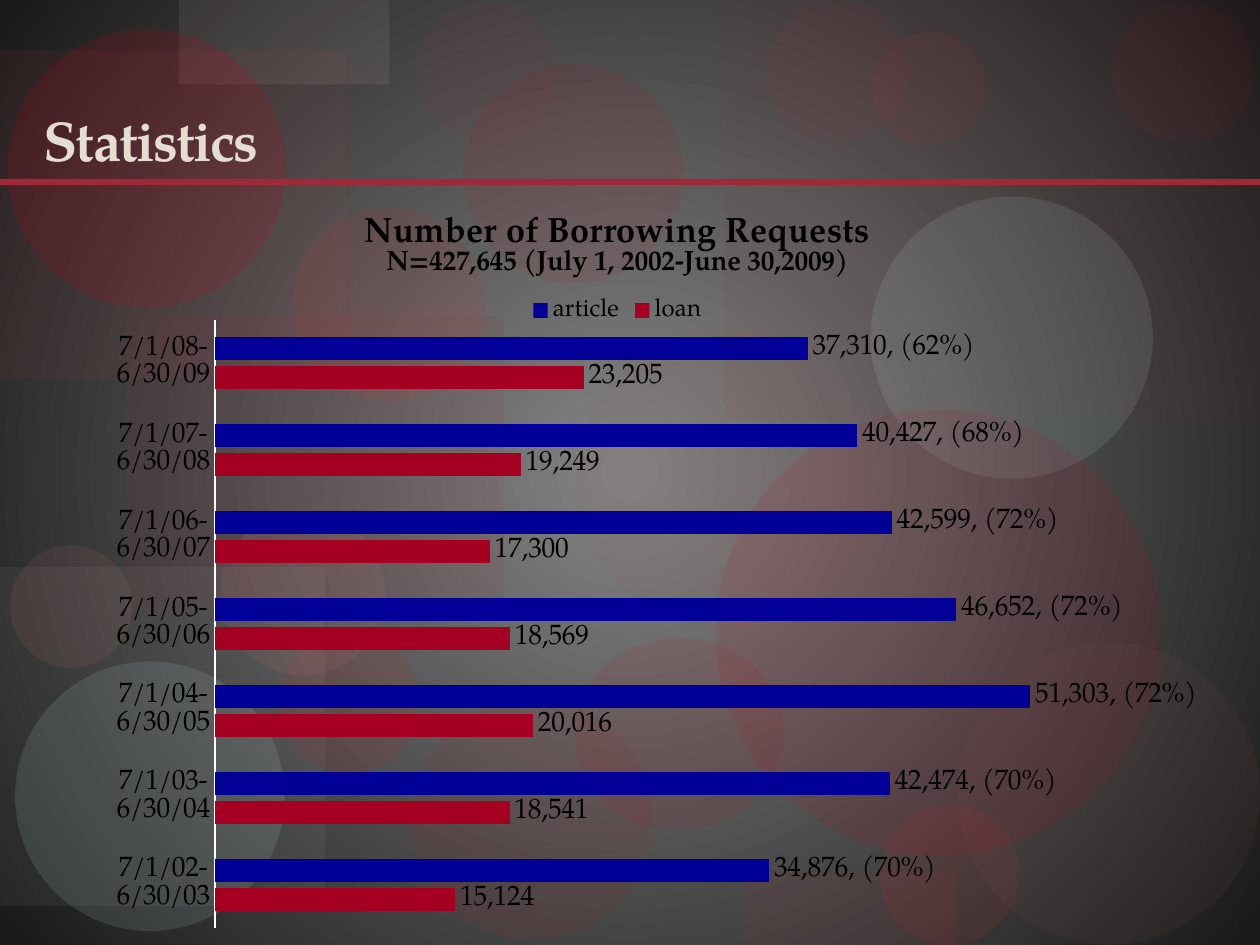
from dataclasses import dataclass

from lxml.etree import SubElement
from pptx import Presentation
from pptx.chart.data import CategoryChartData
from pptx.dml.color import RGBColor
from pptx.enum.chart import XL_CHART_TYPE, XL_LABEL_POSITION, XL_LEGEND_POSITION, XL_TICK_MARK
from pptx.enum.shapes import MSO_SHAPE
from pptx.enum.text import MSO_ANCHOR
from pptx.oxml import parse_xml
from pptx.oxml.ns import nsdecls, qn
from pptx.util import Pt

EMU_PER_PX = 9144  # 100 px to the inch
RECT, OVAL = MSO_SHAPE.RECTANGLE, MSO_SHAPE.OVAL


@dataclass(frozen=True)
class Theme:
    font: str = "TeX Gyre Pagella"
    glow: str = "848484"
    edge: str = "191919"
    rule: str = "9F2936"
    heading: str = "E3DED1"
    ink: str = "000000"
    axis: str = "FFFFFF"
    loan: str = "A50021"
    article: str = "000099"
    heading_size: int = 32
    chart_title_size: int = 20
    subtitle_size: int = 16
    label_size: int = 16
    legend_size: int = 14


# kind, left, top, width, height, colour, opacity in percent
BACKDROP = [
    (RECT, 100, 251, 300, 233, "9F2936", 9),
    (OVAL, 326, 555, 192, 190, "932C32", 13),
    (RECT, 575, 0, 425, 333, "9F2936", 6),
    (RECT, 0, 450, 258, 269, "AEAEAE", 8),
    (OVAL, 457, 261, 238, 238, "9D585B", 8),
    (OVAL, 698, 639, 111, 111, "EC232F", 9),
    (OVAL, 691, 156, 224, 224, "C1E8E4", 11),
    (OVAL, 12, 525, 214, 214, "C1E8E4", 12),
    (OVAL, 221, 501, 112, 112, "EC232F", 9),
    (OVAL, 456, 506, 166, 153, "C80016", 8),
    (RECT, 0, 40, 275, 261, "D03F47", 7),
    (RECT, 142, 0, 167, 67, "CDADAE", 10),
    (OVAL, 6, 23, 221, 221, "C80016", 15),
    (OVAL, 8, 433, 97, 97, "D5777B", 10),
    (OVAL, 232, 165, 153, 153, "EC232F", 9),
    (OVAL, 368, 51, 174, 174, "C80016", 8),
    (OVAL, 568, 325, 354, 354, "C80016", 10),
    (OVAL, 608, 1, 112, 112, "EC232F", 4),
    (OVAL, 760, 510, 240, 240, "9D585B", 8),
    (OVAL, 175, 405, 131, 131, "D5777B", 10),
    (OVAL, 692, 25, 90, 90, "EC232F", 6),
    (OVAL, 883, 1, 112, 112, "EC232F", 4),
    (RECT, 592, 692, 167, 58, "9F2936", 10),
    (OVAL, 329, 1, 112, 112, "EC232F", 4),
]

YEARS = [f"7/1/{y:02}-6/30/{y + 1:02}" for y in range(2, 9)]
LOANS = [15124, 18541, 20016, 18569, 17300, 19249, 23205]
ARTICLES = [34876, 42474, 51303, 46652, 42599, 40427, 37310]
ARTICLE_SHARES = [70, 70, 72, 72, 72, 68, 62]


def apply(target, values):
    for name, value in values.items():
        setattr(target, name, value)


class Deck:
    def __init__(self, theme, width, height):
        self.theme = theme
        self.presentation = Presentation()
        apply(self.presentation, {"slide_width": width * EMU_PER_PX,
                                  "slide_height": height * EMU_PER_PX})
        self.slide = self.presentation.slides.add_slide(self.presentation.slide_layouts[6])

    def box(self, *lengths):
        return [length * EMU_PER_PX for length in lengths]

    def style(self, font, size, color, bold=False):
        apply(font, {"name": self.theme.font, "size": Pt(size), "bold": bold})
        font.color.rgb = RGBColor.from_string(color)

    def radial_background(self, inner, outer):
        fill = self.slide.background.fill
        fill.gradient()
        for stop, position, color in zip(fill.gradient_stops, (0, 1), (inner, outer)):
            stop.position = position
            stop.color.rgb = RGBColor.from_string(color)
        linear = next(self.slide.element.iter(qn("a:lin")))
        linear.getparent().replace(linear, parse_xml(
            f'<a:path {nsdecls("a")} path="circle">'
            '<a:fillToRect l="50000" t="50000" r="50000" b="50000"/></a:path>'))

    def shape(self, kind, left, top, width, height, color, opacity=100):
        shape = self.slide.shapes.add_shape(kind, *self.box(left, top, width, height))
        shape.shadow.inherit = False
        shape.line.fill.background()
        shape.fill.solid()
        shape.fill.fore_color.rgb = RGBColor.from_string(color)
        if opacity < 100:
            rgb = shape.element.spPr.find(f"{qn('a:solidFill')}/{qn('a:srgbClr')}")
            SubElement(rgb, qn("a:alpha"), val=str(opacity * 1000))

    def heading(self, text, *lengths):
        frame = self.slide.shapes.add_textbox(*self.box(*lengths)).text_frame
        apply(frame, {"word_wrap": True, "vertical_anchor": MSO_ANCHOR.BOTTOM})
        run = frame.paragraphs[0].add_run()
        run.text = text
        self.style(run.font, self.theme.heading_size, self.theme.heading, True)
        run.font._element.set("spc", "-100")

    def bar_chart(self, title_lines, categories, series, *lengths):
        """Draw clustered bars; series maps a name to (values, colour)."""
        data = CategoryChartData(number_format="#,##0")
        data.categories = categories
        for name, (values, _) in series.items():
            data.add_series(name, values)
        chart = self.slide.shapes.add_chart(
            XL_CHART_TYPE.BAR_CLUSTERED, *self.box(*lengths), data).chart
        self.style(chart.font, 10, self.theme.axis)
        self.chart_title(chart, title_lines)
        self.chart_axes(chart)
        apply(chart, {"has_legend": True})
        apply(chart.legend, {"position": XL_LEGEND_POSITION.TOP, "include_in_layout": False})
        self.style(chart.legend.font, self.theme.legend_size, self.theme.ink)

        plot = chart.plots[0]
        apply(plot, {"gap_width": 150, "overlap": -25, "vary_by_categories": False})
        for bars, (_, color) in zip(plot.series, series.values()):
            bars.format.fill.solid()
            bars.format.fill.fore_color.rgb = RGBColor.from_string(color)
            apply(bars.data_labels, {"show_value": True, "number_format": "#,##0",
                                     "number_format_is_linked": False,
                                     "position": XL_LABEL_POSITION.OUTSIDE_END})
            self.style(bars.data_labels.font, self.theme.label_size, self.theme.ink)
        plot_area = chart._chartSpace.chart.plotArea
        for layout in plot_area.findall(qn("c:layout")):
            plot_area.remove(layout)
        plot_area.insert(0, parse_xml(
            f'<c:layout {nsdecls("c")}><c:manualLayout><c:layoutTarget val="inner"/>'
            '<c:xMode val="edge"/><c:yMode val="edge"/><c:x val="0.137"/><c:y val="0.173"/>'
            '<c:w val="0.86"/><c:h val="0.805"/></c:manualLayout></c:layout>'))
        return chart

    def chart_title(self, chart, lines):
        frame = chart.chart_title.text_frame
        sizes = (self.theme.chart_title_size, self.theme.subtitle_size)
        for index, (line, size) in enumerate(zip(lines, sizes)):
            paragraph = frame.add_paragraph() if index else frame.paragraphs[0]
            run = paragraph.add_run()
            run.text = line
            self.style(run.font, size, self.theme.ink, True)

    def chart_axes(self, chart):
        apply(chart.value_axis, {"visible": False, "has_major_gridlines": False,
                                 "minimum_scale": 0, "maximum_scale": 60000})
        axis = chart.category_axis
        apply(axis, {"major_tick_mark": XL_TICK_MARK.NONE, "minor_tick_mark": XL_TICK_MARK.NONE})
        axis.format.line.color.rgb = RGBColor.from_string(self.theme.axis)
        self.style(axis.tick_labels.font, self.theme.label_size, self.theme.ink)

    def point_labels(self, bars, texts):
        for index, text in enumerate(texts):
            label = bars.points[index].data_label
            run = label.text_frame.paragraphs[0].add_run()
            run.text = text
            self.style(run.font, self.theme.label_size, self.theme.ink)
            label.position = XL_LABEL_POSITION.OUTSIDE_END


def main():
    theme = Theme()
    deck = Deck(theme, 1000, 750)
    deck.radial_background(theme.glow, theme.edge)
    for decoration in BACKDROP:
        deck.shape(*decoration)
    deck.shape(RECT, 0, 142, 1000, 5, theme.rule)
    deck.heading("Statistics", 25, 97, 900, 45)
    requests = deck.bar_chart(
        ["Number of Borrowing Requests", "N=427,645 (July 1, 2002-June 30,2009)"],
        YEARS, {"loan": (LOANS, theme.loan), "article": (ARTICLES, theme.article)},
        50, 150, 900, 600)
    deck.point_labels(requests.plots[0].series[1],
                      [f"{count:,}, ({share}%)" for count, share in zip(ARTICLES, ARTICLE_SHARES)])
    deck.presentation.save("out.pptx")


if __name__ == "__main__":
    main()
